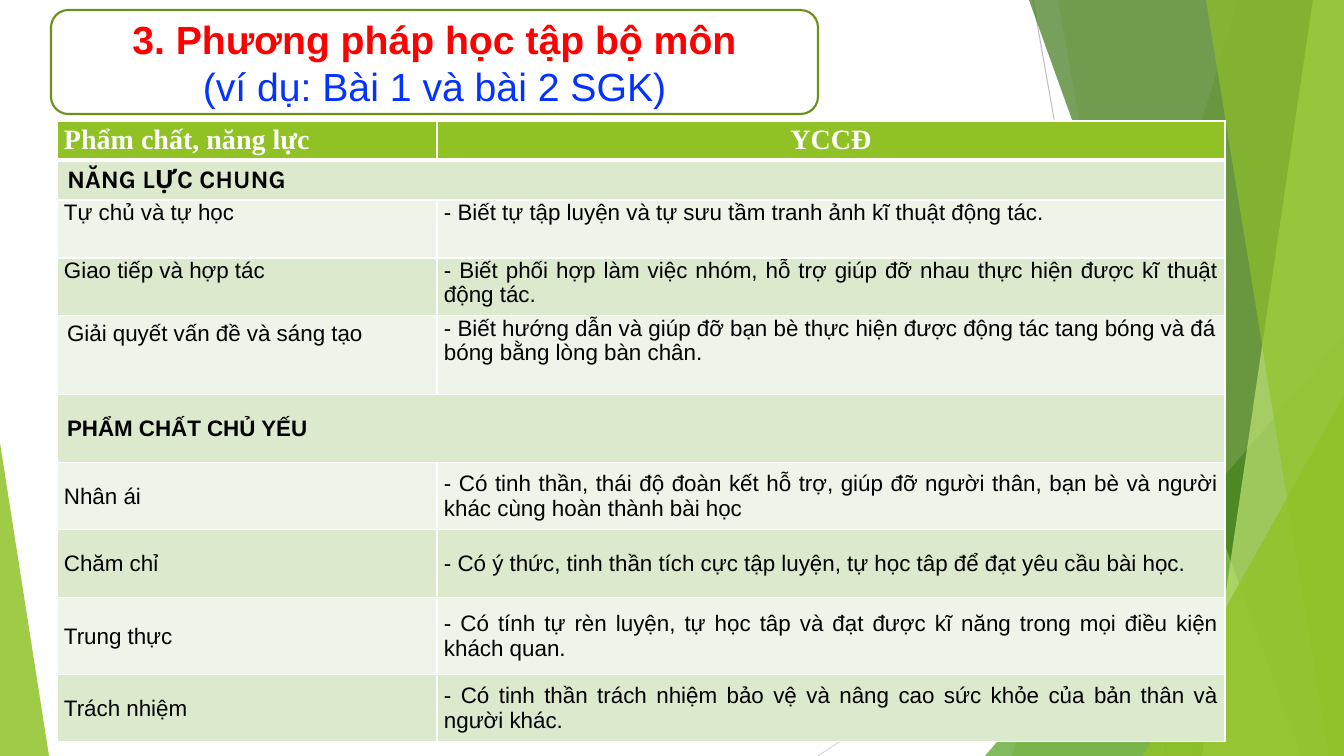
"""Builds a slide with a table of competences and qualities for a sports lesson."""
from lxml import etree
from pptx import Presentation
from pptx.dml.color import RGBColor
from pptx.enum.shapes import MSO_CONNECTOR, MSO_SHAPE
from pptx.enum.text import MSO_ANCHOR, MSO_AUTO_SIZE, PP_ALIGN
from pptx.oxml.ns import qn
from pptx.util import Pt

PX = 12192000 / 1344
WIDTH, HEIGHT = 1344, 756
STRAIGHT = MSO_CONNECTOR.STRAIGHT
TRIANGLE, ROUNDED = MSO_SHAPE.RIGHT_TRIANGLE, MSO_SHAPE.ROUNDED_RECTANGLE
ISOSCELES = MSO_SHAPE.ISOSCELES_TRIANGLE
TOP, MIDDLE = MSO_ANCHOR.TOP, MSO_ANCHOR.MIDDLE
LEFT, CENTER, JUSTIFY = PP_ALIGN.LEFT, PP_ALIGN.CENTER, PP_ALIGN.JUSTIFY
NO_FIT = MSO_AUTO_SIZE.NONE
COLORS = {
    "white": "FFFFFF", "black": "000000", "red": "FF0000", "blue": "0432FF",
    "green": "90C226", "leaf": "54A021", "forest": "3F7819", "lime": "C0E474",
    "outline": "6B901C", "gray": "BFBFBF", "light gray": "D9D9D9",
    "dark band": "DBE9CD", "light band": "EEF4E8",
}


def px(*lengths):
    return [round(length * PX) for length in lengths]


def style(span, font_name, size, color, bold):
    span.font.name = font_name
    span.font.size = Pt(size)
    span.font.bold = bold
    span.font.color.rgb = RGBColor.from_string(COLORS[color])


deck = Presentation()
deck.slide_width, deck.slide_height = px(WIDTH, HEIGHT)
page = deck.slides.add_slide(deck.slide_layouts[5])

for ends, color in [((1033, 0, 1167, 756), "gray"), ((1344, 406, 818, 756), "light gray")]:
    ray = page.shapes.add_connector(STRAIGHT, *px(*ends))
    ray.line.color.rgb = RGBColor.from_string(COLORS[color])
    ray.line.width = Pt(0.75)
    etree.SubElement(ray._element.spPr, qn("a:effectLst"))

# (top x, bottom x) describes a band; (left, top, width, height, tip) a triangle
facets = [
    ((1238, 1012), "green", 30),
    ((1058, 1192), "green", 20),
    ((985, 336, 359, 420, 1), "leaf", 72),
    ((1029, 1301), "forest", 70),
    ((1313, 1202), "lime", 70),
    ((1206, 1329), "green", 65),
    ((1143, 396, 201, 360, 1), "green", 80),
    ((0, 443, 49, 313, 0), "green", 85),
]
for outline, color, opacity in facets:
    if len(outline) == 2:
        top_x, bottom_x = outline
        builder = page.shapes.build_freeform(top_x, 0, scale=PX)
        builder.add_line_segments([(WIDTH, 0), (WIDTH, HEIGHT), (bottom_x, HEIGHT)])
        facet = builder.convert_to_shape()
    else:
        facet = page.shapes.add_shape(ISOSCELES, *px(*outline[:4]))
        facet.adjustments[0] = outline[4]
    facet.shadow.inherit = False
    facet.line.fill.background()
    facet.fill.solid()
    facet.fill.fore_color.rgb = RGBColor.from_string(COLORS[color])
    tint = facet._element.spPr.find(qn("a:solidFill"))[0]
    etree.SubElement(tint, qn("a:alpha"), val=str(opacity * 1000))

rows = [
    (39, TOP, "Phẩm chất, năng lực", "YCCĐ"),
    (40, TOP, "NĂNG LỰC CHUNG", None),
    (58, TOP, "Tự chủ và tự học",
     "- Biết tự tập luyện và tự sưu tầm tranh ảnh kĩ thuật động tác."),
    (58, TOP, "Giao tiếp và hợp tác",
     "- Biết phối hợp làm việc nhóm, hỗ trợ giúp đỡ nhau thực hiện được kĩ thuật động tác."),
    (79, TOP, "Giải quyết vấn đề và sáng tạo",
     "- Biết hướng dẫn và giúp đỡ bạn bè thực hiện được động tác tang bóng "
     "và đá bóng bằng lòng bàn chân."),
    (68, MIDDLE, "PHẨM CHẤT CHỦ YẾU", None),
    (67, MIDDLE, "Nhân ái",
     "- Có tinh thần, thái độ đoàn kết hỗ trợ, giúp đỡ người thân, bạn bè "
     "và người khác cùng hoàn thành bài học"),
    (68, MIDDLE, "Chăm chỉ",
     "- Có ý thức, tinh thần tích cực tập luyện, tự học tâp để đạt yêu cầu bài học."),
    (77, MIDDLE, "Trung thực",
     "- Có tính tự rèn luyện, tự học tâp và đạt được kĩ năng trong mọi điều kiện khách quan."),
    (67, MIDDLE, "Trách nhiệm",
     "- Có tinh thần trách nhiệm bảo vệ và nâng cao sức khỏe của bản thân và người khác."),
]
PROBLEM_ROW = 4
table_height = sum(row[0] for row in rows)
table = page.shapes.add_table(len(rows), 2, *px(57, 121, 1168, table_height)).table
for column, width in zip(table.columns, px(380, 788)):
    column.width = width

for row_index, (height, anchor, *texts) in enumerate(rows):
    table.rows[row_index].height = px(height)[0]
    is_header, is_section = row_index == 0, texts[1] is None
    if is_section:
        table.cell(row_index, 0).merge(table.cell(row_index, 1))
    for column_index, text in enumerate(texts):
        cell = table.cell(row_index, column_index)
        borders = cell._tc.get_or_add_tcPr()
        for side in ("lnL", "lnR", "lnT", "lnB"):
            thick = (row_index, side) in [(0, "lnB"), (1, "lnT")]
            border = etree.SubElement(borders, qn(f"a:{side}"), w=str(Pt(3 if thick else 1)))
            paint = etree.SubElement(border, qn("a:solidFill"))
            etree.SubElement(paint, qn("a:srgbClr"), val=COLORS["white"])
        band = "green" if is_header else "dark band" if row_index % 2 else "light band"
        cell.fill.solid()
        cell.fill.fore_color.rgb = RGBColor.from_string(COLORS[band])
        if text is None:
            continue

        cell.vertical_anchor = anchor
        is_problem = row_index == PROBLEM_ROW
        if not is_section and not (is_problem and column_index == 0):
            cell.margin_left, cell.margin_right, cell.margin_top, cell.margin_bottom = px(7, 7, 0, 0)
        cell.text_frame.text = text
        para = cell.text_frame.paragraphs[0]
        span = para.runs[0]
        if is_header:
            para.alignment = CENTER if column_index else LEFT
            para.line_spacing = 1.1
            para.space_before = para.space_after = Pt(2)
            style(span, "Times New Roman", 20, "white", True)
        elif row_index == 1:
            style(span, "Karla", 18, "black", True)
        else:
            style(span, "Arial", 16, "black", is_section)
            if not is_section and not is_problem:
                para.alignment = JUSTIFY
                para.space_before = para.space_after = Pt(6)

title_area = px(51, 10, 767, 104)
frame = page.shapes.add_shape(ROUNDED, *title_area)
frame.shadow.inherit = False
frame.fill.background()
frame.line.color.rgb = RGBColor.from_string(COLORS["outline"])
frame.line.width = Pt(1.5)

title = page.shapes.title
title.left, title.top, title.width, title.height = title_area
title.text_frame.text = "3. Phương pháp học tập bộ môn\n(ví dụ: Bài 1 và bài 2 SGK)"
title.text_frame.word_wrap = True
title.text_frame.auto_size = NO_FIT
title.text_frame.vertical_anchor = MIDDLE
for para, color, bold in zip(title.text_frame.paragraphs, ("red", "blue"), (True, False)):
    para.alignment = CENTER
    style(para.runs[0], "Arial", 28, color, bold)

deck.save("out.pptx")
